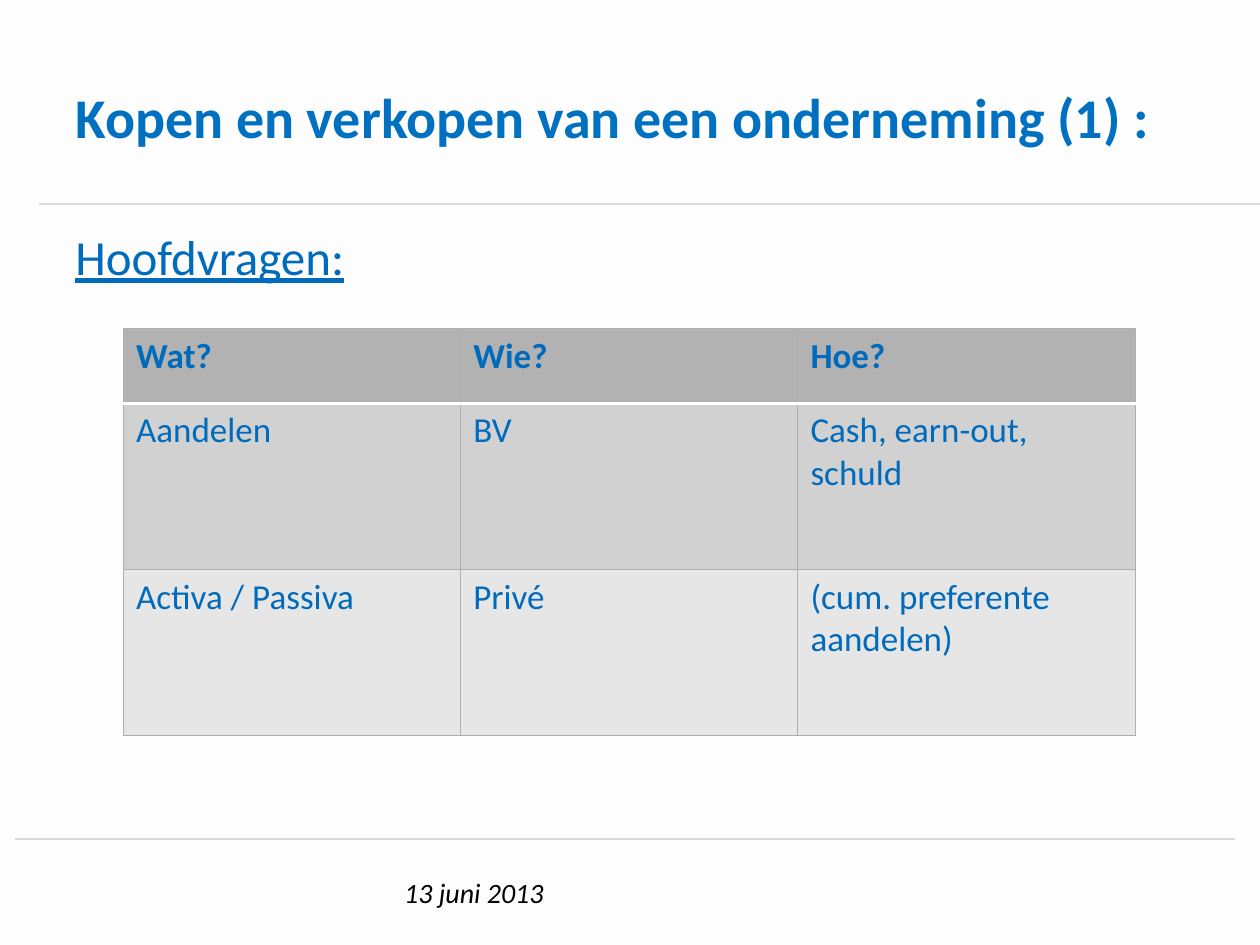
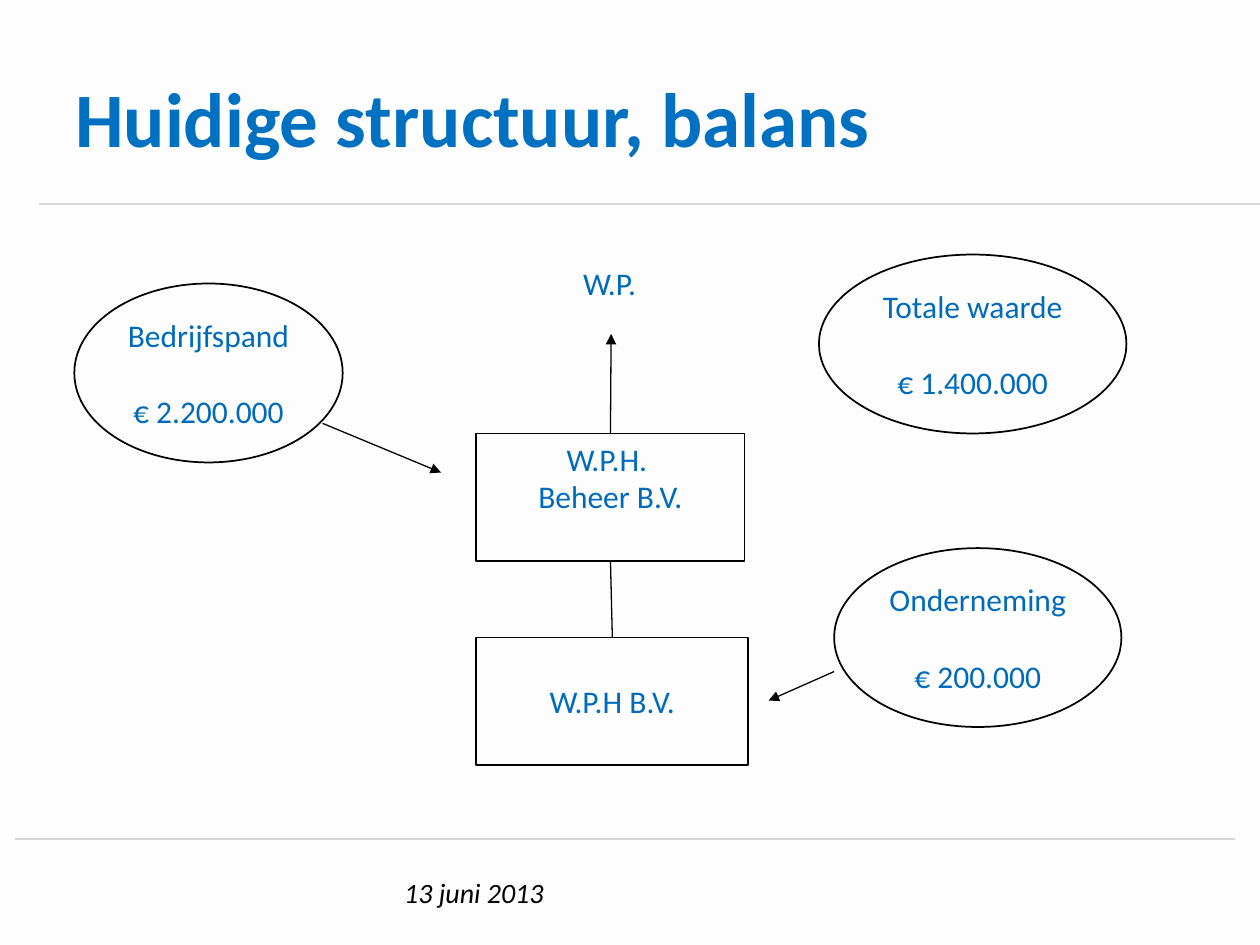
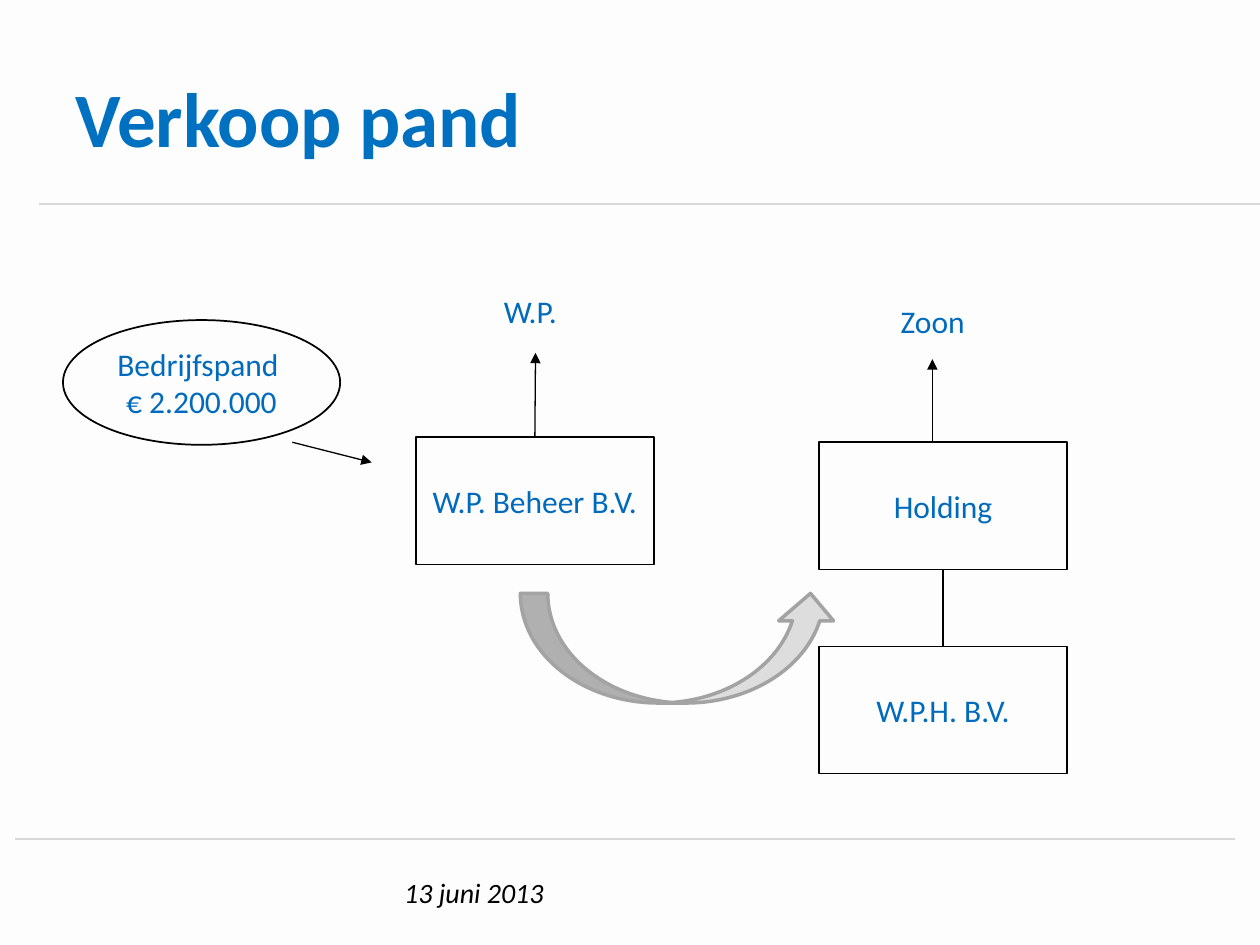
"""Build three slides on buying and selling a company."""
from dataclasses import dataclass
from typing import NamedTuple

from lxml.etree import SubElement
from pptx import Presentation
from pptx.dml.color import RGBColor as Rgb
from pptx.enum.shapes import MSO_CONNECTOR as Link, MSO_SHAPE as Form
from pptx.enum.text import MSO_ANCHOR as Anchor, PP_ALIGN as Align
from pptx.oxml.ns import qn
from pptx.util import Pt

SCALE = 9144
TOP, BOTTOM = 0, 2


@dataclass(frozen=True)
class Theme:
    font: str = "Calibri"
    back: str = "FDFDFD"
    rule: str = "D8D8D8"
    title: str = "0070C0"
    text: str = "006BBC"
    ink: str = "000000"
    white: str = "FFFFFF"
    head: str = "B2B2B2"
    bands: tuple = ("D1D1D1", "E6E6E6")
    grid: str = "AEAEAE"
    bend: str = "DDDDDD"
    edge: str = "A3A3A3"
    large: int = 44
    mid: int = 32
    body: int = 28
    cell: int = 20
    label: int = 18
    foot: int = 16


THEME = Theme()


class Box(NamedTuple):
    left: int
    top: int
    width: int
    height: int


class Style(NamedTuple):
    size: int
    color: str = THEME.text
    bold: bool = False
    slant: bool = False
    under: bool = False


class Node(NamedTuple):
    box: Box
    lines: tuple
    form: Form = Form.RECTANGLE
    anchor: Anchor = Anchor.MIDDLE
    gap: int = 0


class Label(NamedTuple):
    box: Box
    text: str


class Line(NamedTuple):
    start: tuple
    end: tuple
    arrow: bool = True
    tail: int | None = None
    head: int | None = None


LABEL = Style(THEME.label)


def px(count: int) -> int:
    return count * SCALE


def place(box: Box) -> list[int]:
    return [px(side) for side in box]


def write(frame, lines: tuple, style: Style, align=Align.LEFT, gap: int = 0) -> None:
    frame.word_wrap = True
    for index, text in enumerate(lines):
        para = frame.add_paragraph() if index else frame.paragraphs[0]
        para.alignment = align
        if index and gap:
            para.space_before = Pt(gap)
        run = para.add_run()
        run.text = text
        font = run.font
        font.name, font.size = THEME.font, Pt(style.size)
        font.bold, font.italic, font.underline = style.bold, style.slant, style.under
        font.color.rgb = Rgb.from_string(style.color)


def add_text(slide, box: Box, text: str, style: Style, anchor=Anchor.TOP) -> None:
    frame = slide.shapes.add_textbox(*place(box)).text_frame
    frame.vertical_anchor = anchor
    write(frame, (text,), style)


def add_form(slide, form: Form, box: Box, color: str, width: float, fill: str = ""):
    shape = slide.shapes.add_shape(form, *place(box))
    shape.shadow.inherit = False
    if fill:
        shape.fill.solid()
        shape.fill.fore_color.rgb = Rgb.from_string(fill)
    else:
        shape.fill.background()
    shape.line.color.rgb = Rgb.from_string(color)
    shape.line.width = Pt(width)
    return shape


def add_node(slide, node: Node):
    shape = add_form(slide, node.form, node.box, THEME.ink, 1)
    shape.text_frame.vertical_anchor = node.anchor
    write(shape.text_frame, node.lines, LABEL, Align.CENTER, node.gap)
    return shape


def add_line(slide, start: tuple, end: tuple, color: str, width: float, arrow: bool = False):
    line = slide.shapes.add_connector(Link.STRAIGHT, *map(px, start + end))
    line.line.color.rgb = Rgb.from_string(color)
    line.line.width = Pt(width)
    if arrow:
        SubElement(line.line._get_or_add_ln(), qn("a:tailEnd"), type="triangle")
    SubElement(line._element.spPr, qn("a:effectLst"))
    return line


def add_slide(deck, title: str, size: int):
    slide = deck.slides.add_slide(deck.slide_layouts[6])
    slide.background.fill.solid()
    slide.background.fill.fore_color.rgb = Rgb.from_string(THEME.back)
    add_line(slide, (31, 162), (1000, 162), THEME.rule, 1.5)
    add_text(slide, Box(311, 690, 402, 37), "13 juni 2013", Style(THEME.foot, THEME.ink, slant=True))
    add_line(slide, (12, 666), (980, 666), THEME.rule, 1.5)
    add_text(slide, Box(50, 30, 900, 125), title, Style(size, THEME.title, bold=True), Anchor.MIDDLE)
    return slide


def add_edge(cell, side: str, color: str, width: float) -> None:
    edge = SubElement(cell._tc.get_or_add_tcPr(), qn(f"a:ln{side}"), w=str(Pt(width)))
    SubElement(SubElement(edge, qn("a:solidFill")), qn("a:srgbClr"), val=color)


def add_grid(slide, box: Box, rows: tuple, heights: tuple) -> None:
    table = slide.shapes.add_table(len(rows), len(rows[0]), *place(box)).table
    for row, high in zip(table.rows, heights):
        row.height = px(high)
    for y, row in enumerate(rows):
        for x, text in enumerate(row):
            cell = table.cell(y, x)
            for side in "LRTB":
                split = (y, side) in ((0, "B"), (1, "T"))
                add_edge(cell, side, *((THEME.white, 2) if split else (THEME.grid, 0.75)))
            cell.fill.solid()
            fill = THEME.bands[(y - 1) % 2] if y else THEME.head
            cell.fill.fore_color.rgb = Rgb.from_string(fill)
            write(cell.text_frame, (text,), Style(THEME.cell, bold=y == 0))


def add_chain(slide, nodes: tuple, labels: tuple, lines: tuple) -> None:
    shapes = [add_node(slide, node) for node in nodes]
    for label in labels:
        add_text(slide, label.box, label.text, LABEL)
    for item in lines:
        line = add_line(slide, item.start, item.end, THEME.ink, 0.75, item.arrow)
        if item.tail is not None:
            line.begin_connect(shapes[item.tail], TOP if item.arrow else BOTTOM)
        if item.head is not None:
            line.end_connect(shapes[item.head], TOP)


def draw_main(deck) -> None:
    slide = add_slide(deck, "Kopen en verkopen van een onderneming (1) :", THEME.mid)
    add_text(slide, Box(50, 175, 900, 495), "Hoofdvragen:", Style(THEME.body, under=True))
    rows = (
        ("Wat?", "Wie?", "Hoe?"),
        ("Aandelen", "BV", "Cash, earn-out, schuld"),
        ("Activa / Passiva", "Privé", "(cum. preferente aandelen)"),
    )
    add_grid(slide, Box(98, 261, 803, 323), rows, (59, 132, 132))


def draw_now(deck) -> None:
    slide = add_slide(deck, "Huidige structuur, balans", THEME.large)
    nodes = (
        Node(Box(59, 225, 213, 142), ("Bedrijfspand", "€ 2.200.000"), Form.OVAL, gap=22),
        Node(Box(650, 202, 244, 142), ("Totale waarde", "€ 1.400.000"), Form.OVAL, gap=22),
        Node(Box(662, 435, 228, 142), ("Onderneming", "€ 200.000"), Form.OVAL, gap=22),
        Node(Box(378, 344, 213, 101), ("W.P.H. ", "Beheer B.V."), anchor=Anchor.TOP),
        Node(Box(378, 506, 216, 101), ("W.P.H B.V.",)),
    )
    lines = (
        Line((256, 336), (350, 375)),
        Line((662, 533), (610, 556)),
        Line((485, 344), (485, 265), tail=3),
        Line((485, 445), (486, 506), arrow=False, tail=3, head=4),
    )
    add_chain(slide, nodes, (Label(Box(453, 205, 134, 40), "W.P."),), lines)


def draw_sale(deck) -> None:
    slide = add_slide(deck, "Verkoop pand", THEME.large)
    nodes = (
        Node(Box(50, 254, 220, 99), ("Bedrijfspand ", "€ 2.200.000"), Form.OVAL),
        Node(Box(330, 347, 189, 101), ("W.P. Beheer B.V.",)),
        Node(Box(650, 351, 197, 101), ("Holding",)),
        Node(Box(650, 513, 197, 101), ("W.P.H. B.V.",)),
    )
    labels = (Label(Box(390, 227, 118, 40), "W.P."), Label(Box(705, 235, 110, 40), "Zoon"))
    lines = (
        Line((232, 351), (295, 367)),
        Line((425, 347), (425, 280), tail=1),
        Line((740, 351), (740, 285)),
        Line((748, 452), (748, 513), arrow=False, tail=2, head=3),
    )
    add_chain(slide, nodes, labels, lines)
    add_form(slide, Form.CURVED_UP_ARROW, Box(413, 471, 252, 87), THEME.edge, 2, THEME.bend)


def main() -> None:
    deck = Presentation()
    deck.slide_width, deck.slide_height = px(1000), px(750)
    for draw in (draw_main, draw_now, draw_sale):
        draw(deck)
    deck.save("out.pptx")


if __name__ == "__main__":
    main()
